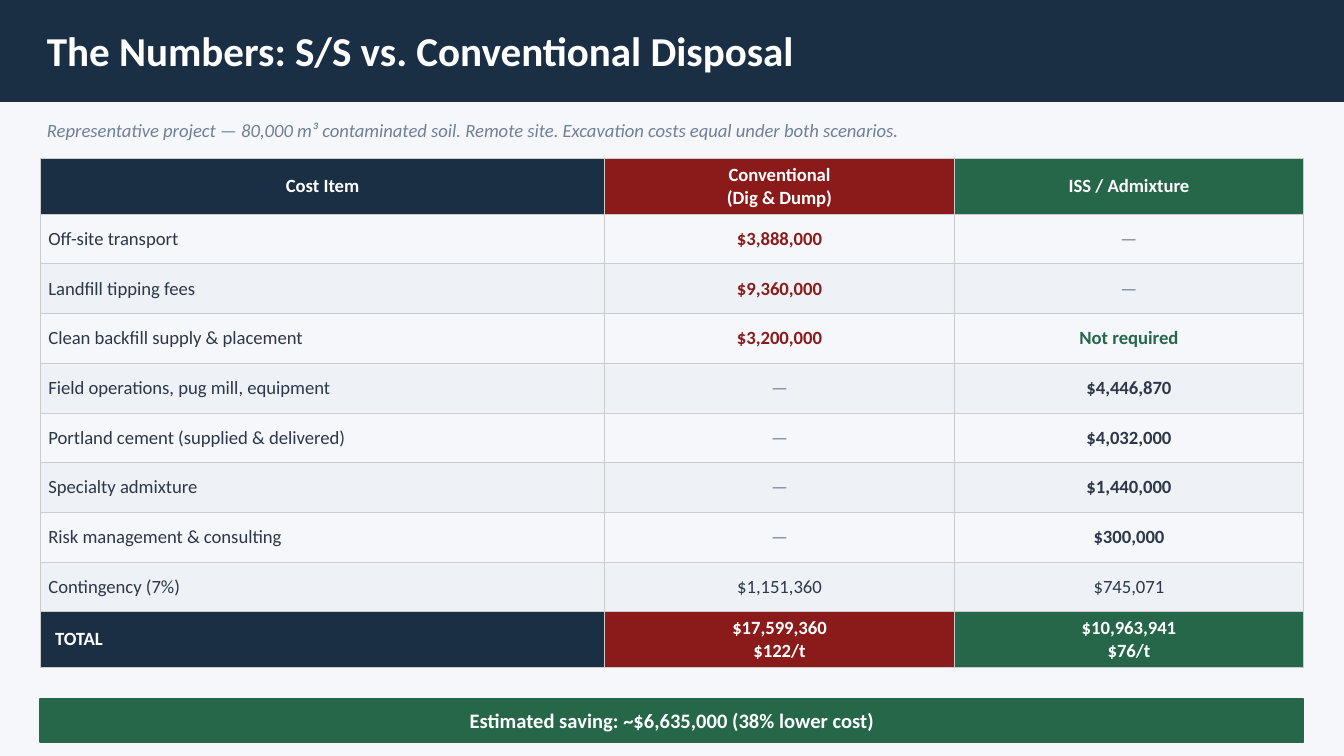
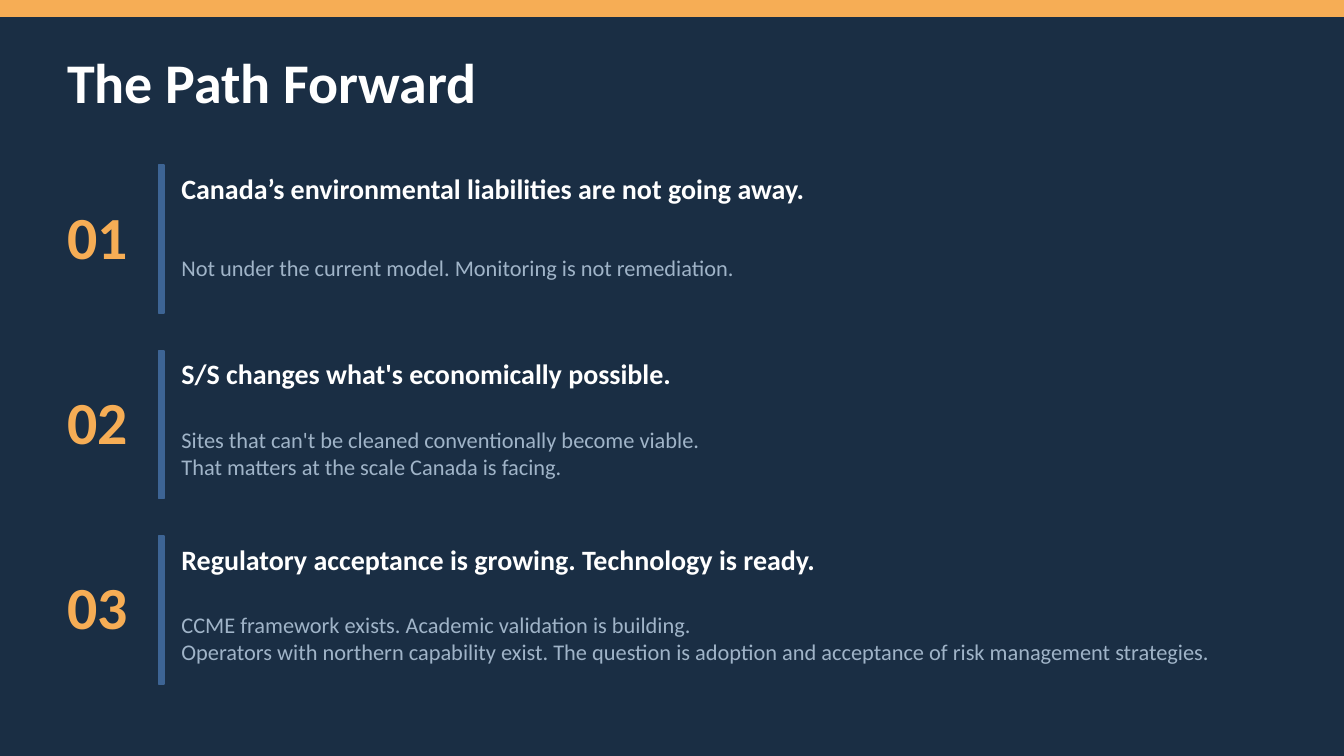
"""Build two slides: a remediation cost comparison and the path forward."""
from dataclasses import dataclass

from lxml import etree
from pptx import Presentation, util as u
from pptx.dml import color
from pptx.enum import shapes, text
from pptx.oxml import ns

FONT = "Calibri"
COLORS = {
    "navy": "1A2E44", "red": "8B1A1A", "green": "276749", "amber": "F6AD55",
    "blue": "3D6494", "paper": "F5F7FA", "stripe": "EEF2F7", "border": "CCCCCC",
    "ink": "2D3748", "muted": "718096", "mist": "A0B4C8", "white": "FFFFFF",
}
W, H = 720, 405
MARGIN, CONTENT_W = 21.6, 676.8
ROW_H = 26.64
COLUMN_WIDTHS = (302.4, 187.2, 187.2)
COLUMN_FILLS = ("navy", "red", "green")
POINT_TOP, POINT_PITCH = 86.4, 99.36
TEXT_LEFT, TEXT_W = 97.2, 597.6
LEFT, CENTER = text.PP_ALIGN.LEFT, text.PP_ALIGN.CENTER


@dataclass(frozen=True)
class Style:
    size: float
    color: str
    bold: bool = False
    italic: bool = False
    align: text.PP_ALIGN = LEFT


@dataclass(frozen=True)
class CostRow:
    item: str
    conventional: str
    iss: str
    conventional_style: str = "none"
    iss_style: str = "none"


@dataclass(frozen=True)
class Point:
    number: str
    heading: str
    detail: str


STYLES = {
    "item": Style(10, "ink"),
    "head": Style(10, "white", bold=True, align=CENTER),
    "total": Style(10, "white", bold=True),
    "none": Style(10, "muted", align=CENTER),
    "plain": Style(10, "ink", align=CENTER),
    "cost": Style(10, "ink", bold=True, align=CENTER),
    "high": Style(10, "red", bold=True, align=CENTER),
    "good": Style(10, "green", bold=True, align=CENTER),
}

HEADINGS = ("Cost Item", "Conventional\n(Dig & Dump)", "ISS / Admixture")
TOTALS = ("TOTAL", "$17,599,360\n$122/t", "$10,963,941\n$76/t")
COSTS = (
    CostRow("Off-site transport", "$3,888,000", "—", "high"),
    CostRow("Landfill tipping fees", "$9,360,000", "—", "high"),
    CostRow("Clean backfill supply & placement", "$3,200,000", "Not required", "high", "good"),
    CostRow("Field operations, pug mill, equipment", "—", "$4,446,870", iss_style="cost"),
    CostRow("Portland cement (supplied & delivered)", "—", "$4,032,000", iss_style="cost"),
    CostRow("Specialty admixture", "—", "$1,440,000", iss_style="cost"),
    CostRow("Risk management & consulting", "—", "$300,000", iss_style="cost"),
    CostRow("Contingency (7%)", "$1,151,360", "$745,071", "plain", "plain"),
)
POINTS = (
    Point("01", "Canada’s environmental liabilities are not going away.",
          "Not under the current model. Monitoring is not remediation."),
    Point("02", "S/S changes what's economically possible.",
          "Sites that can't be cleaned conventionally become viable.\n"
          "That matters at the scale Canada is facing."),
    Point("03", "Regulatory acceptance is growing. Technology is ready.",
          "CCME framework exists. Academic validation is building.\n"
          "Operators with northern capability exist. The question is adoption "
          "and acceptance of risk management strategies."),
)


def rgb(name: str) -> color.RGBColor:
    return color.RGBColor.from_string(COLORS[name])


def write(tf, content: str, style: Style) -> None:
    tf.text = content
    for p in tf.paragraphs:
        p.alignment = style.align
        for r in p.runs:
            r.font.name = FONT
            r.font.size = u.Pt(style.size)
            r.font.bold = style.bold
            r.font.italic = style.italic
            r.font.color.rgb = rgb(style.color)


def add_text(s, x: float, y: float, w: float, h: float, content: str, style: Style) -> None:
    tf = s.shapes.add_textbox(u.Pt(x), u.Pt(y), u.Pt(w), u.Pt(h)).text_frame
    tf.word_wrap = True
    tf.vertical_anchor = text.MSO_ANCHOR.MIDDLE
    tf.margin_left = tf.margin_right = tf.margin_top = tf.margin_bottom = u.Pt(0)
    write(tf, content, style)


def add_bar(s, x: float, y: float, w: float, h: float, fill: str) -> None:
    sp = s.shapes.add_shape(shapes.MSO_SHAPE.RECTANGLE, u.Pt(x), u.Pt(y), u.Pt(w), u.Pt(h))
    sp.shadow.inherit = False
    sp.fill.solid()
    sp.fill.fore_color.rgb = rgb(fill)
    sp.line.color.rgb = rgb(fill)
    sp.line.width = u.Pt(1)


def add_slide(prs, background: str):
    s = prs.slides.add_slide(prs.slide_layouts[6])
    s.background.fill.solid()
    s.background.fill.fore_color.rgb = rgb(background)
    return s


def set_borders(cell) -> None:
    tc_pr = cell._tc.get_or_add_tcPr()
    for side in ("L", "R", "T", "B"):
        ln = etree.SubElement(tc_pr, ns.qn(f"a:ln{side}"), w=str(u.Pt(0.5)))
        fill = etree.SubElement(ln, ns.qn("a:solidFill"))
        etree.SubElement(fill, ns.qn("a:srgbClr"), val=COLORS["border"])


def fill_cell(cell, content: str, style: str, fill: str | None) -> None:
    cell.vertical_anchor = text.MSO_ANCHOR.MIDDLE
    cell.margin_left = cell.margin_right = u.Pt(7.92 if style == "total" else 4.32)
    cell.margin_top = cell.margin_bottom = u.Pt(2.88)
    set_borders(cell)
    if fill:
        cell.fill.solid()
        cell.fill.fore_color.rgb = rgb(fill)
    else:
        cell.fill.background()
    write(cell.text_frame, content, STYLES[style])


def add_cost_table(s) -> None:
    rows = [(HEADINGS, ("head",) * 3, COLUMN_FILLS)]
    for i, c in enumerate(COSTS):
        fill = "stripe" if i % 2 else None
        rows.append(((c.item, c.conventional, c.iss),
                     ("item", c.conventional_style, c.iss_style), (fill,) * 3))
    rows.append((TOTALS, ("total", "head", "head"), COLUMN_FILLS))

    table = s.shapes.add_table(len(rows), len(COLUMN_WIDTHS), u.Pt(MARGIN), u.Pt(84.96),
                               u.Pt(CONTENT_W), u.Pt(ROW_H * len(rows))).table
    table.first_row = table.horz_banding = False
    for column, width in zip(table.columns, COLUMN_WIDTHS):
        column.width = u.Pt(width)
    for i, row in enumerate(rows):
        table.rows[i].height = u.Pt(ROW_H)
        for j, (content, style, fill) in enumerate(zip(*row)):
            fill_cell(table.cell(i, j), content, style, fill)


def build_numbers(prs) -> None:
    s = add_slide(prs, "paper")
    add_bar(s, 0, 0, W, 54, "navy")
    add_text(s, 25.2, 0, 669.6, 54, "The Numbers: S/S vs. Conventional Disposal",
             Style(22, "white", bold=True))
    add_text(s, 25.2, 59.04, 669.6, 21.6,
             "Representative project — 80,000 m³ contaminated soil. Remote site. "
             "Excavation costs equal under both scenarios.",
             Style(10, "muted", italic=True))
    add_cost_table(s)
    add_bar(s, MARGIN, 374.4, CONTENT_W, 23.04, "green")
    add_text(s, MARGIN, 374.4, CONTENT_W, 23.04,
             "Estimated saving: ~$6,635,000 (38% lower cost)",
             Style(11, "white", bold=True, align=CENTER))


def add_point(s, y: float, point: Point) -> None:
    add_text(s, 28.8, y + 3.6, 46.8, 72, point.number,
             Style(32, "amber", bold=True, align=CENTER))
    add_bar(s, 84.96, y + 2.16, 2.88, 79.2, "blue")
    add_text(s, TEXT_LEFT, y, TEXT_W, 28.8, point.heading, Style(15, "white", bold=True))
    add_text(s, TEXT_LEFT, y + 30.96, TEXT_W, 51.84, point.detail, Style(12, "mist"))


def build_path(prs) -> None:
    s = add_slide(prs, "navy")
    add_bar(s, 0, 0, W, 8.64, "amber")
    add_text(s, 36, 20.16, 648, 46.8, "The Path Forward", Style(30, "white", bold=True))
    for i, point in enumerate(POINTS):
        add_point(s, POINT_TOP + i * POINT_PITCH, point)


def main() -> None:
    prs = Presentation()
    prs.slide_width, prs.slide_height = u.Pt(W), u.Pt(H)
    build_numbers(prs)
    build_path(prs)
    prs.save("out.pptx")


if __name__ == "__main__":
    main()
